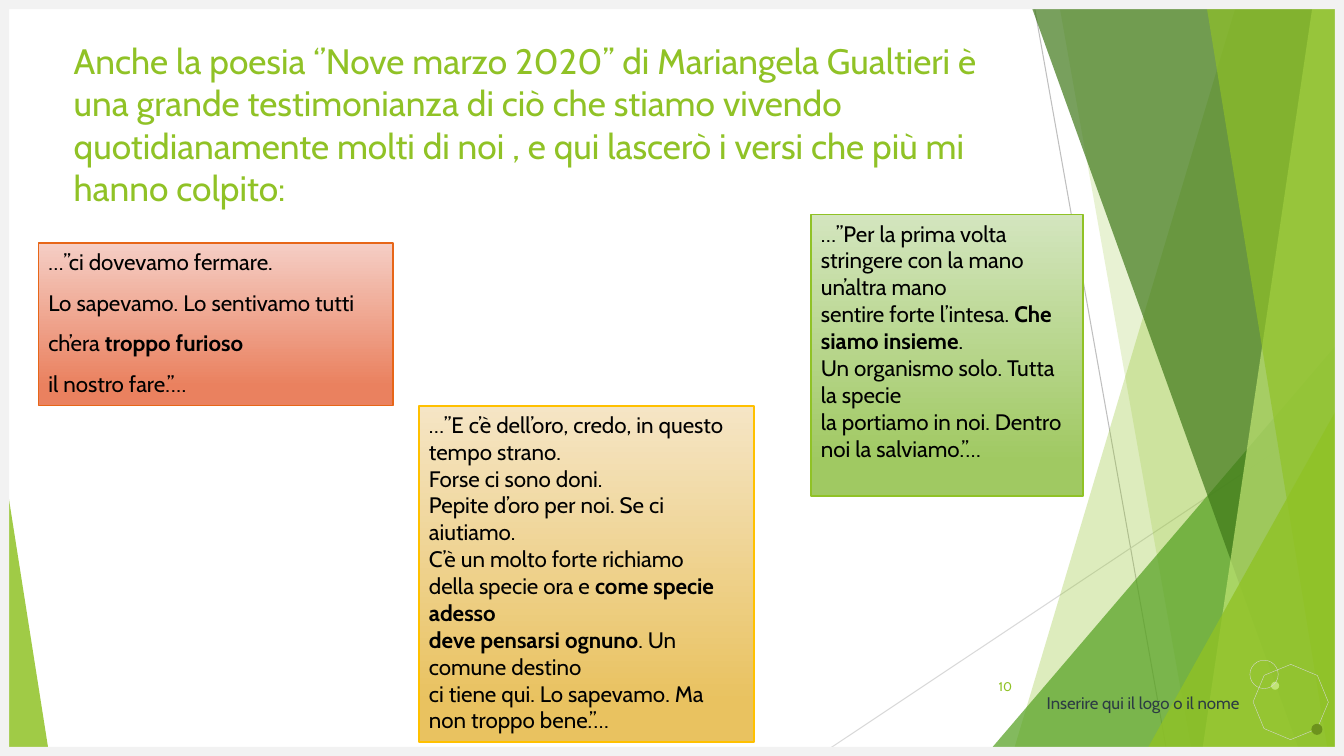
from lxml.etree import SubElement
from pptx import Presentation
from pptx.dml.color import RGBColor
from pptx.enum.shapes import MSO_CONNECTOR, MSO_SHAPE
from pptx.enum.text import MSO_ANCHOR, MSO_AUTO_SIZE, PP_ALIGN
from pptx.oxml.ns import qn
from pptx.util import Pt

W, H = 960, 540
FONT = "Cabin"
GREEN, LIME, GREY = "90C226", "C0E474", "D9D9D9"
EDGE = 6.5

LINES = [(738, 0, 834, H, "BFBFBF"), (W, 290, 584.6, H, GREY)]
# top x, bottom x, colour, opacity
BACK_BANDS = [(884.2, 722.9, GREEN, 30), (756, 851.8, GREEN, 20)]
FRONT_BANDS = [(735.1, 929.5, "3F7819", 70), (938.2, 858.2, LIME, 70),
               (861.1, 949, GREEN, 65)]
FRAME = [(0, H - EDGE, W, EDGE), (0, 0, W, EDGE),
         (0, 0, EDGE, H), (W - EDGE, 0, EDGE, H)]

TITLE = ("Anche la poesia ‘’Nove marzo 2020’’ di Mariangela Gualtieri è una grande "
         "testimonianza di ciò che stiamo vivendo quotidianamente molti di noi , "
         "e qui lascerò i versi che più mi hanno colpito:")

# Each verse alternates plain and bold pieces, starting with plain
VERSES = [
    dict(box=(27.4, 173.5, 253.4, 116), stops=("F5CEC5", "EA815F"), edge="E76618",
         before=10, verses=[
             ["…’’ci dovevamo fermare."],
             ["Lo sapevamo. Lo sentivamo tutti"],
             ["ch’era ", "troppo furioso"],
             ["il nostro fare.’’…"]]),
    dict(box=(299.3, 290, 239.3, 240), stops=("F5E5C5", "E9C260"), edge="FFC000",
         before=0, verses=[
             ["…’’E c’è dell’oro, credo, in questo tempo strano."],
             ["Forse ci sono doni."],
             ["Pepite d’oro per noi. Se ci aiutiamo."],
             ["C’è un molto forte richiamo"],
             ["della specie ora e ", "come specie adesso"],
             ["", "deve pensarsi ognuno", ". Un comune destino"],
             ["ci tiene qui. Lo sapevamo. Ma non troppo bene.’’…"]]),
    dict(box=(579.3, 153.4, 194.4, 201), stops=("D3E5BE", "A0C962"), edge=GREEN,
         before=0, verses=[
             ["…’’Per la prima volta"],
             ["stringere con la mano un’altra mano"],
             ["sentire forte l’intesa. ", "Che siamo insieme", "."],
             ["Un organismo solo. Tutta la specie"],
             ["la portiamo in noi. Dentro noi la salviamo.’’…"]]),
]


def rgb(color):
    return RGBColor.from_string(color)


def set_all(obj, values):
    for name, value in values.items():
        setattr(obj, name, value)


def paint(sp, fill=None, opacity=100, line=None, width=0.25):
    sp.shadow.inherit = False
    if fill:
        sp.fill.solid()
        sp.fill.fore_color.rgb = rgb(fill)
        if opacity < 100:
            clr = sp._element.spPr.find(qn("a:solidFill"))[0]
            SubElement(clr, qn("a:alpha")).set("val", str(opacity * 1000))
    else:
        sp.fill.background()
    if line:
        sp.line.color.rgb = rgb(line)
        sp.line.width = Pt(width)
    else:
        sp.line.fill.background()


def add_shape(s, kind, box, **look):
    sp = s.shapes.add_shape(kind, *map(Pt, box))
    paint(sp, **look)
    return sp


def add_triangle(s, box, tip, fill, opacity):
    sp = add_shape(s, MSO_SHAPE.ISOSCELES_TRIANGLE, box, fill=fill, opacity=opacity)
    sp.adjustments[0] = tip


def add_band(s, top, bottom, fill, opacity):
    """Slanted band that reaches from its left side to the slide's right edge."""
    fb = s.shapes.build_freeform(Pt(top), 0)
    fb.add_line_segments([(Pt(x), Pt(y)) for x, y in ((W, 0), (W, H), (bottom, H))])
    paint(fb.convert_to_shape(), fill, opacity)


def add_line(s, x1, y1, x2, y2, color):
    cn = s.shapes.add_connector(MSO_CONNECTOR.STRAIGHT, *map(Pt, (x1, y1, x2, y2)))
    cn.line.color.rgb = rgb(color)
    cn.line.width = Pt(0.75)
    SubElement(cn._element.spPr, qn("a:effectLst"))


def add_run(p, text, size, color, bold=False):
    r = p.add_run()
    r.text = text
    set_all(r.font, dict(name=FONT, size=Pt(size), bold=bold))
    r.font.color.rgb = rgb(color)


def add_label(s, text, box, size, color, **frame):
    tf = s.shapes.add_textbox(*map(Pt, box)).text_frame
    set_all(tf, dict(word_wrap=True, **frame))
    p = tf.paragraphs[0]
    p.alignment = PP_ALIGN.RIGHT
    add_run(p, text, size, color)


def add_verses(s, box, stops, edge, before, verses):
    sp = add_shape(s, MSO_SHAPE.RECTANGLE, box, line=edge, width=1)
    sp.fill.gradient()
    sp.fill.gradient_angle = 270
    for stop, color, position in zip(sp.fill.gradient_stops, stops, (0, 0.88)):
        stop.color.rgb = rgb(color)
        stop.position = position
    tf = sp.text_frame
    set_all(tf, dict(word_wrap=True, vertical_anchor=MSO_ANCHOR.TOP))
    for i, verse in enumerate(verses):
        p = tf.add_paragraph() if i else tf.paragraphs[0]
        set_all(p, dict(alignment=PP_ALIGN.LEFT, space_before=Pt(before)))
        for j, text in enumerate(verse):
            if text:
                add_run(p, text, 16, "000000", bold=j % 2 == 1)


def add_background(s):
    for line in LINES:
        add_line(s, *line)
    for band in BACK_BANDS:
        add_band(s, *band)
    add_triangle(s, (703.5, 240, 256.5, 300), 1, "54A021", 72)
    for band in FRONT_BANDS:
        add_band(s, *band)
    add_triangle(s, (816.7, 283, 143.3, 257), 1, GREEN, 80)
    add_triangle(s, (0, 316, 35.3, 224), 0, GREEN, 85)


def add_ornament(s):
    octagon = add_shape(s, MSO_SHAPE.OCTAGON, (897.1, 476.6, 49.7, 49.7), line=GREY)
    octagon.rotation = 22.7
    add_shape(s, MSO_SHAPE.OVAL, (907.9, 486.9, 5.8, 5.8), fill=LIME)
    add_shape(s, MSO_SHAPE.OVAL, (936.7, 517, 7.9, 7.9), fill="6C921D")
    add_shape(s, MSO_SHAPE.OVAL, (892.8, 471.6, 20.2, 20.2), line=GREY)


def format_title(s):
    title = s.shapes.title
    s.shapes._spTree.append(title._element)
    box = dict(left=45.4, top=24.5, width=676.8, height=103.7)
    set_all(title, {side: Pt(value) for side, value in box.items()})
    tf = title.text_frame
    set_all(tf, dict(word_wrap=True, vertical_anchor=MSO_ANCHOR.TOP,
                     auto_size=MSO_AUTO_SIZE.NONE))
    p = tf.paragraphs[0]
    set_all(p, dict(alignment=PP_ALIGN.LEFT, line_spacing=1.0, space_before=Pt(0)))
    add_run(p, TITLE, 25.2, GREEN)


def main():
    prs = Presentation()
    set_all(prs, dict(slide_width=Pt(W), slide_height=Pt(H)))
    s = prs.slides.add_slide(prs.slide_layouts[5])
    add_background(s)
    add_ornament(s)
    add_label(s, "Inserire qui il logo o il nome", (687.6, 494.6, 198, 14.4), 12, "2C3C43",
              margin_left=0, margin_top=0, margin_right=0, margin_bottom=0)
    for bar in FRAME:
        add_shape(s, MSO_SHAPE.RECTANGLE, bar, fill="F2F2F2")
    format_title(s)
    add_label(s, "10", (676, 476, 54, 28.8), 9, GREEN, vertical_anchor=MSO_ANCHOR.MIDDLE)
    for verse_box in VERSES:
        add_verses(s, **verse_box)
    prs.save("out.pptx")


if __name__ == "__main__":
    main()
